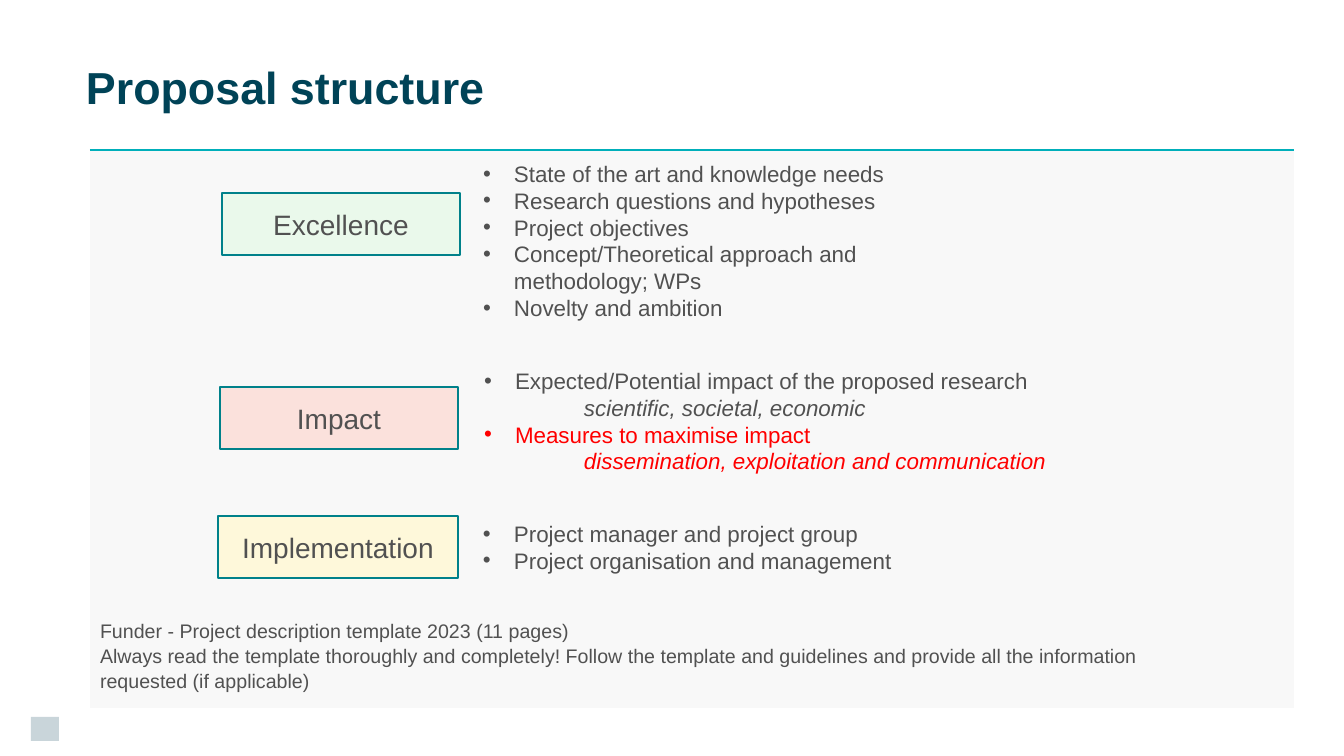
from dataclasses import dataclass

from lxml import etree
from pptx import Presentation
from pptx.dml.color import RGBColor
from pptx.enum.shapes import MSO_CONNECTOR, MSO_SHAPE
from pptx.enum.text import MSO_ANCHOR, PP_ALIGN
from pptx.oxml.ns import qn
from pptx.util import Pt

RECTANGLE = MSO_SHAPE.RECTANGLE
STRAIGHT = MSO_CONNECTOR.STRAIGHT
TOP, MIDDLE = MSO_ANCHOR.TOP, MSO_ANCHOR.MIDDLE
CENTER = PP_ALIGN.CENTER


@dataclass(frozen=True)
class Theme:
    font: str = "Arial"
    title: str = "004357"
    text: str = "515151"
    alert: str = "FF0000"
    rule: str = "00AFBA"
    border: str = "00818A"
    panel: str = "F2F2F2"
    mark: str = "C9D5DA"
    title_size: int = 32
    label_size: int = 20
    body_size: int = 16
    note_size: int = 14


THEME = Theme()

TITLE = "Proposal structure"
# Each point is (text, is a detail line, colour).
SECTIONS = [
    {"label": "Excellence", "fill": "EAF9EB", "box": (222, 193, 238, 62),
     "list_at": (481, 159, 470, 164),
     "points": [
         ("State of the art and knowledge needs", False, THEME.text),
         ("Research questions and hypotheses", False, THEME.text),
         ("Project objectives", False, THEME.text),
         ("Concept/Theoretical approach and methodology; WPs", False, THEME.text),
         ("Novelty and ambition", False, THEME.text)]},
    {"label": "Impact", "fill": "FBE1DC", "box": (220, 387, 238, 62),
     "list_at": (482, 366, 565, 110),
     "points": [
         ("Expected/Potential impact of the proposed research", False, THEME.text),
         ("scientific, societal, economic", True, THEME.text),
         ("Measures to maximise impact", False, THEME.alert),
         ("dissemination, exploitation and communication", True, THEME.alert)]},
    {"label": "Implementation", "fill": "FEF8DA", "box": (218, 516, 240, 62),
     "list_at": (481, 519, 412, 56),
     "points": [
         ("Project manager and project group", False, THEME.text),
         ("Project organisation and management", False, THEME.text)]},
]
NOTES = [
    "Funder - Project description template 2023 (11 pages)",
    "Always read the template thoroughly and completely! Follow the template "
    "and guidelines and provide all the information",
    "requested (if applicable)",
]

PANEL = (90, 150, 1204, 558)
MARK = (31, 717, 28, 24)
POINT_INDENT, BULLET_HANG, DETAIL_INDENT = 33, 31, 102


def px(length):
    return round(length * 914400 / 100.8)


def rgb(value):
    return RGBColor.from_string(value)


def add_box(page, place, fill, border=None):
    box = page.shapes.add_shape(RECTANGLE, *map(px, place))
    box.shadow.inherit = False
    box.fill.solid()
    box.fill.fore_color.rgb = rgb(fill)
    if border:
        box.line.color.rgb = rgb(border)
        box.line.width = Pt(1)
    else:
        box.line.fill.background()
    return box


def write(box, lines, size, color, bold=False, anchor=TOP, space=0):
    """Fill a shape with one paragraph per line and return the paragraphs."""
    frame = box.text_frame
    frame.word_wrap = True
    frame.vertical_anchor = anchor
    frame.margin_left = frame.margin_right = frame.margin_bottom = 0
    frame.margin_top = px(1)
    frame.text = "\n".join(lines)
    for para in frame.paragraphs:
        para.space_before = Pt(space)
        for span in para.runs:
            span.font.name = THEME.font
            span.font.size = Pt(size)
            span.font.bold = bold
            span.font.color.rgb = rgb(color)
    return frame.paragraphs


def add_text(page, place, lines, size, color, **style):
    box = page.shapes.add_textbox(*map(px, place))
    return write(box, lines, size, color, **style)


def indent(para, left, hang=0):
    """Indent a paragraph, with a bullet in the hanging space if there is one."""
    properties = para._p.get_or_add_pPr()
    properties.set("marL", str(px(left)))
    properties.set("indent", str(-px(hang)))
    if hang:
        etree.SubElement(properties, qn("a:buFont"), typeface=THEME.font)
        etree.SubElement(properties, qn("a:buChar"), char="•")


def add_panel(page):
    panel = add_box(page, PANEL, THEME.panel)
    color = panel._element.spPr.find(".//" + qn("a:srgbClr"))
    etree.SubElement(color, qn("a:alpha"), val="50000")
    left, top, width, _ = PANEL
    rule = page.shapes.add_connector(
        STRAIGHT, px(left), px(top), px(left + width), px(top))
    rule.line.color.rgb = rgb(THEME.rule)
    rule.line.width = Pt(2)
    etree.SubElement(rule._element.spPr, qn("a:effectLst"))


def add_section(page, section):
    box = add_box(page, section["box"], section["fill"], THEME.border)
    label, = write(box, [section["label"]], THEME.label_size, THEME.text,
                   anchor=MIDDLE)
    label.alignment = CENTER

    points = section["points"]
    paras = add_text(page, section["list_at"], [point[0] for point in points],
                     THEME.body_size, THEME.text)
    paras[0].space_before = Pt(1)
    for para, (_, is_detail, color) in zip(paras, points):
        if is_detail:
            indent(para, DETAIL_INDENT)
        else:
            indent(para, POINT_INDENT, BULLET_HANG)
        font = para.runs[0].font
        font.italic = is_detail
        font.color.rgb = rgb(color)


def main():
    deck = Presentation()
    deck.slide_width, deck.slide_height = px(1344), px(756)
    page = deck.slides.add_slide(deck.slide_layouts[6])
    add_box(page, MARK, THEME.mark)
    add_panel(page)
    add_text(page, (86, 58, 538, 56), [TITLE], THEME.title_size, THEME.title,
             bold=True, anchor=MIDDLE, space=1)
    for section in SECTIONS:
        add_section(page, section)
    add_text(page, (100, 618, 1076, 90), NOTES, THEME.note_size, THEME.text,
             space=1)
    deck.save("out.pptx")


if __name__ == "__main__":
    main()
